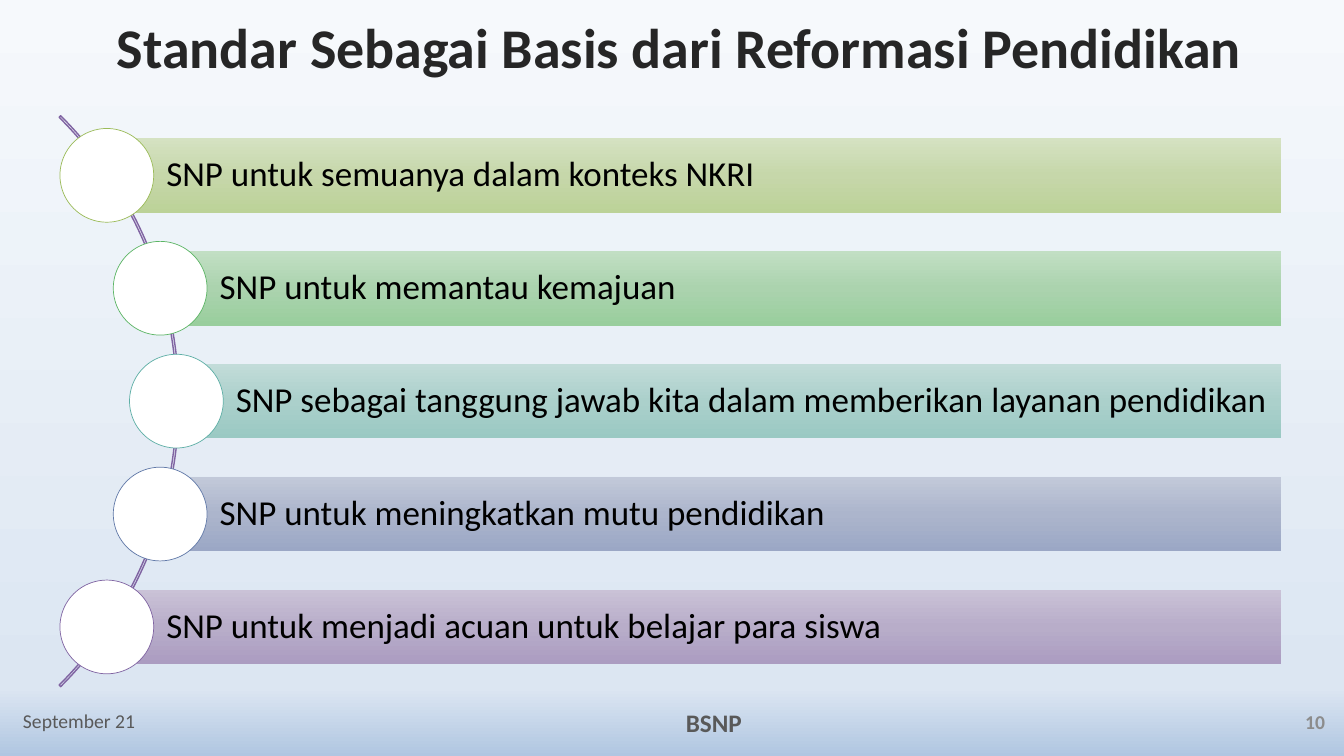
from math import sqrt

from lxml.etree import SubElement
from pptx import Presentation
from pptx.dml.color import RGBColor
from pptx.enum.shapes import MSO_SHAPE
from pptx.enum.text import MSO_ANCHOR, MSO_AUTO_SIZE, PP_ALIGN
from pptx.oxml.ns import qn
from pptx.util import Inches, Pt

FONT = "Calibri"
BACKGROUND = [(0, "F6F9FC"), (91, "DCE6F2"), (100, "B0C6E1")]

# Text, circle outline, and bar colours at 0, 50 and 100 percent
ROWS = [
    ("SNP untuk semuanya dalam konteks NKRI",
     "9BBB59", ("D5E2C2", "C6D7AA", "BCD298")),
    ("SNP untuk memantau kemajuan",
     "5CB565", ("C2DFC4", "ABD3AE", "99CE9D")),
    ("SNP sebagai tanggung jawab kita dalam memberikan layanan pendidikan",
     "5EAFA6", ("C2DCD9", "ABD0CB", "9AC9C3")),
    ("SNP untuk meningkatkan mutu pendidikan",
     "6179A8", ("C2C9D9", "ACB5CC", "9BA7C5")),
    ("SNP untuk menjadi acuan untuk belajar para siswa",
     "8064A2", ("CAC2D7", "B8ADC9", "AB9CC1")),
]

# Geometry in inches: row centres lie on a circle left of the slide
CENTER_X, CENTER_Y = -2.23, 3.98
PATH_RADIUS = 3.98
ARC_SIZE = 8.01
ROW_PITCH = 1.12
BAR_RIGHT, BAR_HEIGHT = 12.71, 0.74
CIRCLE_SIZE = 0.93


def color(hex_text):
    return RGBColor.from_string(hex_text)


def fill_gradient(fill, owner, stops):
    """Fill from top to bottom with (percent, colour) stops."""
    fill.gradient()
    fill.gradient_angle = 270
    stop_list = owner.find(".//" + qn("a:gsLst"))
    for old_stop in list(stop_list):
        stop_list.remove(old_stop)
    for percent, hex_text in stops:
        stop = SubElement(stop_list, qn("a:gs"), pos=str(percent * 1000))
        SubElement(stop, qn("a:srgbClr"), val=hex_text)


def add_span(para, text, size, hex_text, bold=False):
    span = para.add_run()
    span.text = text
    span.font.name = FONT
    span.font.size = Pt(size)
    span.font.bold = bold
    span.font.color.rgb = color(hex_text)


def add_shape(page, kind, left, top, width, height):
    shape = page.shapes.add_shape(
        kind, Inches(left), Inches(top), Inches(width), Inches(height))
    shape.shadow.inherit = False
    return shape


def set_line(shape, hex_text, width):
    shape.line.color.rgb = color(hex_text)
    shape.line.width = Pt(width)


def add_title(page, text):
    title = page.shapes.title
    title.left, title.top = Inches(1.06), Inches(0)
    title.width, title.height = Inches(11.51), Inches(1)
    frame = title.text_frame
    frame.word_wrap = True
    frame.auto_size = MSO_AUTO_SIZE.NONE
    frame.vertical_anchor = MSO_ANCHOR.MIDDLE
    para = frame.paragraphs[0]
    para.alignment = PP_ALIGN.LEFT
    para.line_spacing = 0.9
    add_span(para, text, 40, "262626", bold=True)


def add_arc(page):
    arc = add_shape(page, MSO_SHAPE.BLOCK_ARC, CENTER_X - ARC_SIZE / 2,
                    CENTER_Y - ARC_SIZE / 2, ARC_SIZE, ARC_SIZE)
    # Start and end angles (315 and 45 degrees), then band thickness
    for index, value in enumerate((189, 27, 0.0027)):
        arc.adjustments[index] = value
    arc.fill.background()
    set_line(arc, "8064A2", 1)


def add_bar(page, left, middle, text, shades):
    bar = add_shape(page, MSO_SHAPE.RECTANGLE, left, middle - BAR_HEIGHT / 2,
                    BAR_RIGHT - left, BAR_HEIGHT)
    fill_gradient(bar.fill, bar.element, zip((0, 50, 100), shades))
    bar.line.fill.background()
    frame = bar.text_frame
    frame.word_wrap = True
    frame.vertical_anchor = MSO_ANCHOR.MIDDLE
    frame.margin_left = Inches(0.59)
    frame.margin_right = frame.margin_top = frame.margin_bottom = Inches(0.07)
    para = frame.paragraphs[0]
    para.alignment = PP_ALIGN.LEFT
    para.line_spacing = 0.9
    add_span(para, text, 25, "000000")


def add_circle(page, center, middle, outline):
    circle = add_shape(page, MSO_SHAPE.OVAL, center - CIRCLE_SIZE / 2,
                       middle - CIRCLE_SIZE / 2, CIRCLE_SIZE, CIRCLE_SIZE)
    circle.fill.solid()
    circle.fill.fore_color.rgb = color("FFFFFF")
    set_line(circle, outline, 0.5)


def add_footer(page, left, top, width, text, size, hex_text, align, bold):
    box = page.shapes.add_textbox(
        Inches(left), Inches(top), Inches(width), Inches(0.4))
    frame = box.text_frame
    frame.word_wrap = True
    frame.vertical_anchor = MSO_ANCHOR.MIDDLE
    para = frame.paragraphs[0]
    para.alignment = align
    add_span(para, text, size, hex_text, bold)


def main():
    deck = Presentation()
    deck.slide_width, deck.slide_height = Inches(13.33), Inches(7.5)
    page = deck.slides.add_slide(deck.slide_layouts[5])
    fill_gradient(page.background.fill, page.element, BACKGROUND)
    add_title(page, "Standar Sebagai Basis dari Reformasi Pendidikan")

    # Curved list
    add_arc(page)
    for index, (text, outline, shades) in enumerate(ROWS):
        offset = (index - (len(ROWS) - 1) / 2) * ROW_PITCH
        center = CENTER_X + sqrt(PATH_RADIUS ** 2 - offset ** 2)
        add_bar(page, center, CENTER_Y + offset, text, shades)
        add_circle(page, center, CENTER_Y + offset, outline)

    # Footer
    add_footer(page, 0.13, 6.95, 3, "September 21", 14, "595959",
               PP_ALIGN.LEFT, False)
    add_footer(page, 4.83, 6.97, 4.5, "BSNP", 18, "595959",
               PP_ALIGN.CENTER, True)
    add_footer(page, 10.24, 6.96, 3, "10", 14, "8C8C8C",
               PP_ALIGN.RIGHT, True)
    deck.save("out.pptx")


if __name__ == "__main__":
    main()
